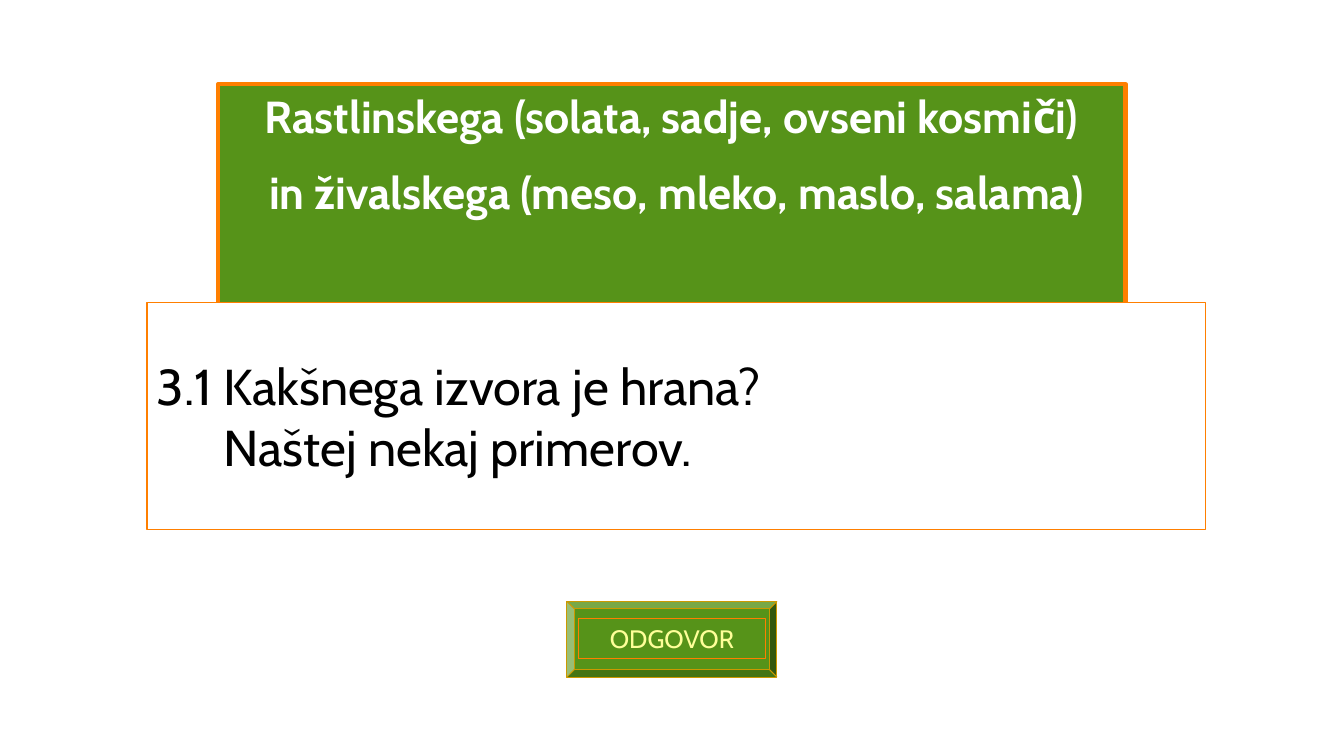
from pptx import Presentation
from pptx.dml.color import RGBColor as RGB
from pptx.enum.shapes import MSO_SHAPE as SHAPE
from pptx.enum.text import MSO_ANCHOR as ANCHOR, PP_ALIGN as ALIGN
from pptx.util import Inches, Pt

COLORS = {
    "green": "569319", "orange": "FF7F00", "gold": "CC9900",
    "white": "FFFFFF", "black": "000000", "yellow": "FFFF99",
}
FONT = "Cabin"
COLS, ROWS = 160, 90
WIDTH, HEIGHT = Inches(13.33), Inches(7.5)


def rgb(name):
    """Return the named colour."""
    return RGB.from_string(COLORS[name])


def add_panel(shapes, box, fill, line, weight=0.75, kind=SHAPE.RECTANGLE):
    """Add a filled, outlined shape in a box of grid columns and rows."""
    x, y, w, h = box
    s = shapes.add_shape(kind, int(x * WIDTH / COLS), int(y * HEIGHT / ROWS),
                         int(w * WIDTH / COLS), int(h * HEIGHT / ROWS))
    s.shadow.inherit = False
    s.fill.solid()
    s.fill.fore_color.rgb = rgb(fill)
    s.line.color.rgb = rgb(line)
    s.line.width = Pt(weight)
    return s


def write(s, lines, color, font, align=ALIGN.LEFT, anchor=ANCHOR.TOP, gap=0):
    """Write lines, each a text and its left indent in inches."""
    tf = s.text_frame
    tf.word_wrap = True
    tf.vertical_anchor = anchor
    for i, (text, indent) in enumerate(lines):
        p = tf.add_paragraph() if i else tf.paragraphs[0]
        p.alignment = align
        p.space_before = Pt(gap if i else 0)
        if indent:
            p._p.get_or_add_pPr().set("marL", str(Inches(indent)))
        r = p.add_run()
        r.text = text
        r.font.color.rgb = rgb(color)
        for key, value in {"name": FONT, **font}.items():
            setattr(r.font, key, value)


def add_button(slide, box):
    """Add the bevelled button with its framed label."""
    x, y, w, h = box
    shapes = slide.shapes.add_group_shape().shapes
    s = add_panel(shapes, box, "green", "gold", kind=SHAPE.BEVEL)
    s.adjustments[0] = 0.1
    label = (x + 1.4, y + 2, w - 2.8, h - 4.2)
    s = add_panel(shapes, label, "green", "orange")
    write(s, [("ODGOVOR", 0)], "yellow", {"size": Pt(18)}, ALIGN.CENTER)


def add_answer(slide, box):
    """Add the green answer banner."""
    s = add_panel(slide.shapes, box, "green", "orange", 3)
    lines = [("Rastlinskega (solata, sadje, ovseni kosmiči)", 0),
             ("in živalskega (meso, mleko, maslo, salama)", 0.1)]
    write(s, lines, "white", {"size": Pt(32), "bold": True}, ALIGN.CENTER, gap=16)


def add_question(slide, box):
    """Add the white question panel."""
    s = add_panel(slide.shapes, box, "white", "orange")
    lines = [("3.1 Kakšnega izvora je hrana?", 0), ("Naštej nekaj primerov.", 0.66)]
    write(s, lines, "black", {"size": Pt(36)}, anchor=ANCHOR.MIDDLE)


def main():
    """Build the quiz slide and save it."""
    prs = Presentation()
    prs.slide_width, prs.slide_height = WIDTH, HEIGHT
    slide = prs.slides.add_slide(prs.slide_layouts[6])
    add_button(slide, (67.5, 71.6, 25, 9))
    add_answer(slide, (26, 10, 108, 27))
    add_question(slide, (17.5, 36, 126, 27))
    prs.save("out.pptx")


if __name__ == "__main__":
    main()
